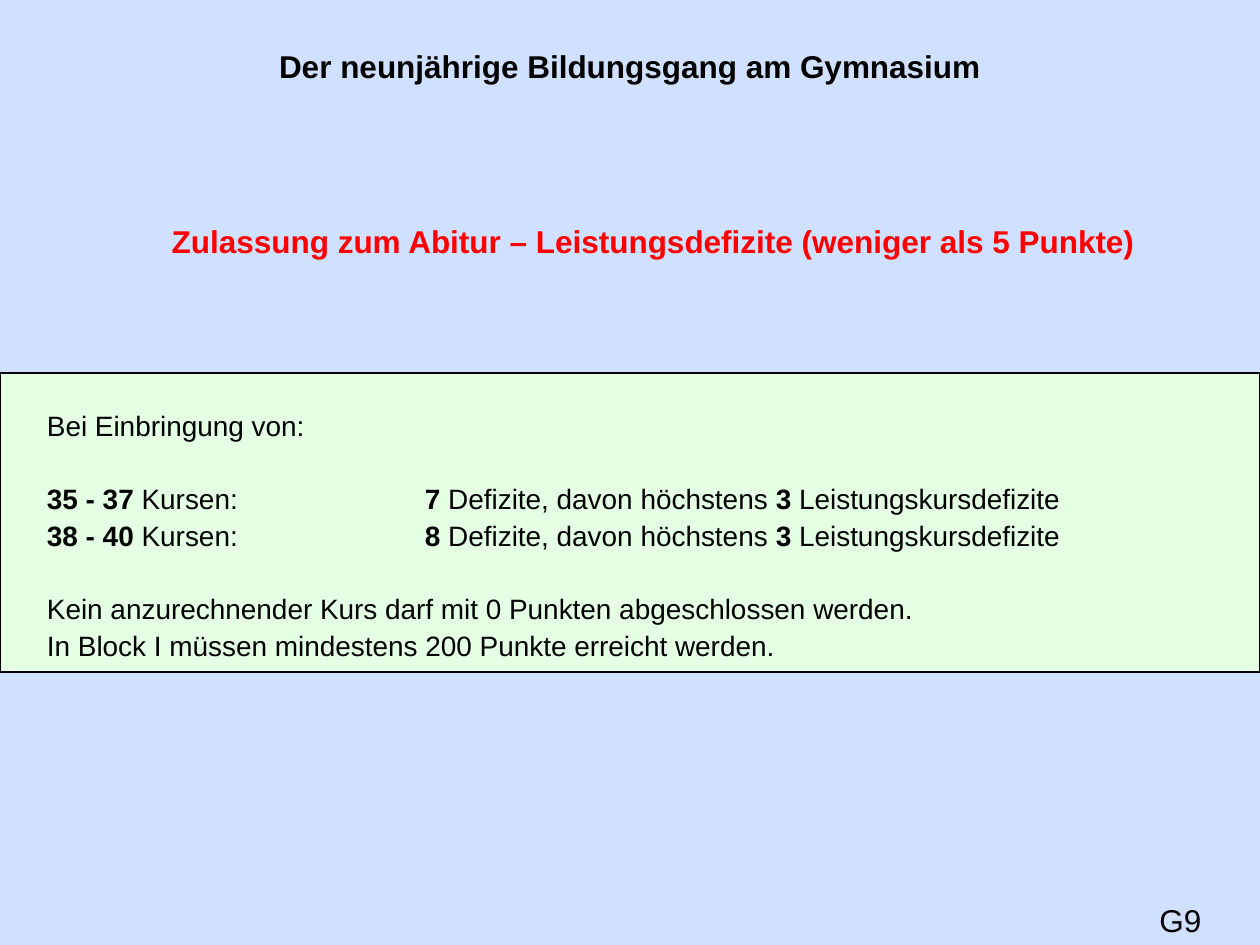
"""Build the slide on performance deficits and admission to the Abitur."""
from pptx import Presentation
from pptx.dml.color import RGBColor as RGB
from pptx.enum.shapes import MSO_SHAPE as Shape
from pptx.enum.text import MSO_ANCHOR as Anchor, PP_ALIGN as Align
from pptx.oxml.ns import qn
from pptx.util import Inches, Pt
from lxml.etree import SubElement as Sub

PX = Inches(1) / 126
BLUE = RGB(0x66, 0x99, 0xFF)
GREEN = RGB(0xE5, 0xFF, 0xE5)
RED = RGB(0xFF, 0, 0)
BLACK = RGB(0, 0, 0)


def px(num):
    return round(num * PX)


def style(font, size, color, bold=False):
    font.name = "Arial"
    font.size = Pt(size)
    font.color.rgb = color
    font.bold = bold


deck = Presentation()
deck.slide_width, deck.slide_height = px(1260), px(945)
slide = deck.slides.add_slide(deck.slide_layouts[6])
shapes = slide.shapes

back = shapes.add_shape(Shape.RECTANGLE, 0, 0, px(1260), px(945))
back.shadow.inherit = False
back.line.fill.background()
back.fill.solid()
back.fill.fore_color.rgb = BLUE
tint = back.fill._xPr.find(qn("a:solidFill"))[0]
Sub(tint, qn("a:alpha"), val="30000")
frame = back.text_frame
frame.vertical_anchor = Anchor.TOP
frame.margin_top = px(47)
frame.text = "Der neunjährige Bildungsgang am Gymnasium"
frame.paragraphs[0].alignment = Align.CENTER
style(frame.paragraphs[0].runs[0].font, 18, BLACK, True)

head = shapes.add_textbox(px(63), px(220), px(1133), px(63))
frame = head.text_frame
frame.word_wrap = True
frame.margin_left, frame.margin_top = px(60), px(2)
frame.text = "Zulassung zum Abitur – Leistungsdefizite (weniger als 5 Punkte)"
frame.paragraphs[0].alignment = Align.CENTER
style(frame.paragraphs[0].runs[0].font, 18, RED, True)

rules = shapes.add_shape(Shape.RECTANGLE, 0, px(373), px(1260), px(299))
rules.shadow.inherit = False
rules.fill.solid()
rules.fill.fore_color.rgb = GREEN
rules.line.color.rgb = BLACK
rules.line.width = Pt(0.75)
frame = rules.text_frame
frame.word_wrap = True
frame.vertical_anchor = Anchor.TOP
frame.margin_left, frame.margin_top = px(47), px(39)
frame.margin_right = frame.margin_bottom = 0

NEAR, FAR = 3.9, 24.4
lines = [(0, ["Bei Einbringung von:"])]
for gap, span, count in [(FAR, "35 - 37", "7"), (NEAR, "38 - 40", "8")]:
    lines.append((gap, ["", span, " Kursen:\t", count, " Defizite, davon höchstens ",
                        "3", " Leistungskursdefizite"]))
lines += [
    (FAR, ["Kein anzurechnender Kurs darf mit 0 Punkten abgeschlossen werden."]),
    (NEAR, ["In Block I müssen mindestens 200 Punkte erreicht werden."]),
]
for row, (gap, parts) in enumerate(lines):
    para = frame.add_paragraph() if row else frame.paragraphs[0]
    para.alignment = Align.LEFT
    para.line_spacing = 0.9
    para.space_before = Pt(gap)
    if len(parts) > 1:
        tabs = Sub(para._p.get_or_add_pPr(), qn("a:tabLst"))
        Sub(tabs, qn("a:tab"), pos=str(px(378)), algn="l")
    for pos, part in enumerate(parts):
        if part:
            run = para.add_run()
            run.text = part
            style(run.font, 16, BLACK, pos % 2 == 1)

mark = shapes.add_textbox(px(1147), px(895), px(68), px(50))
mark.text_frame.word_wrap = False
mark.text_frame.text = "G9"
style(mark.text_frame.paragraphs[0].runs[0].font, 18, BLACK)

deck.save("out.pptx")
